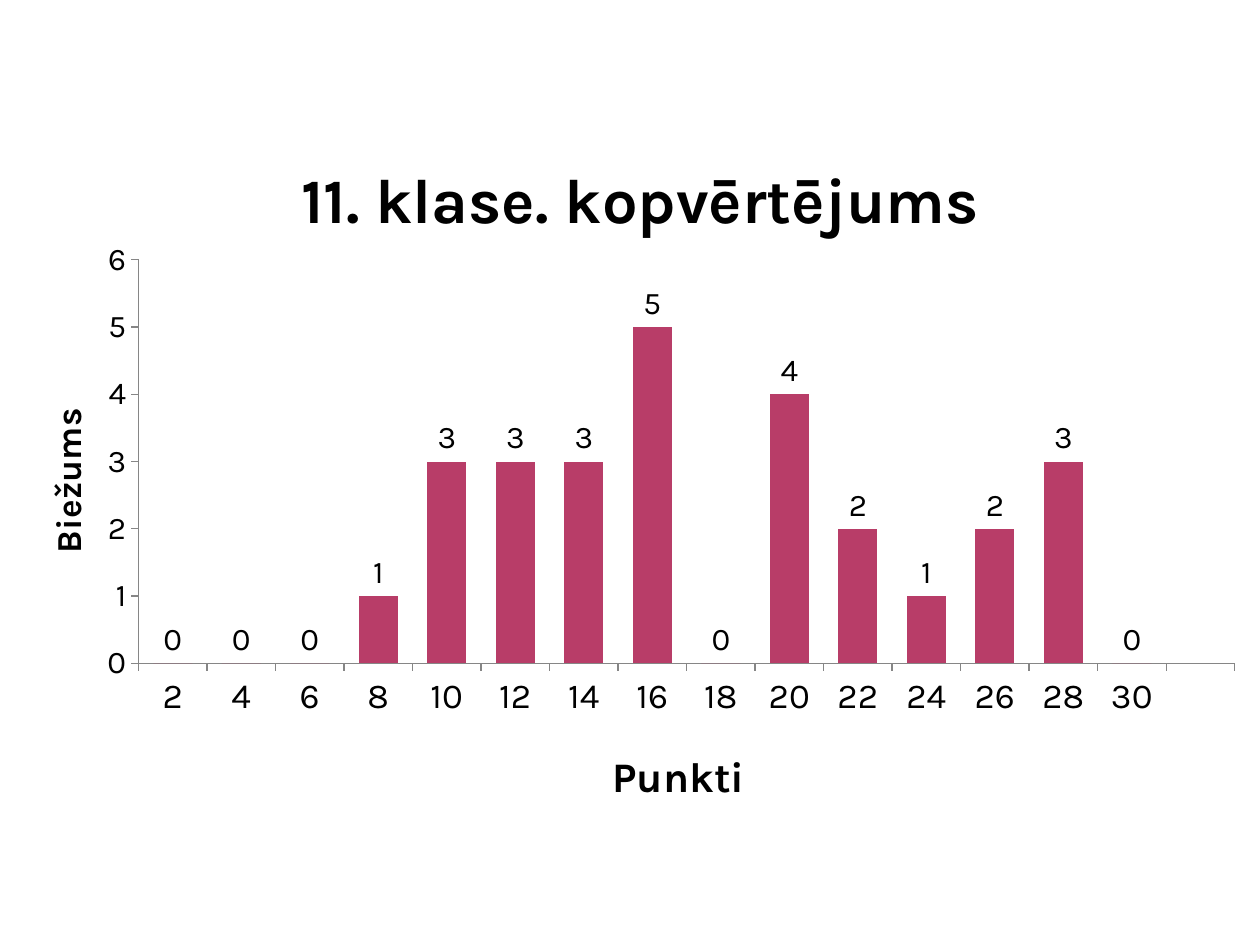
"""Build a slide with a column chart of the class 11 score distribution."""
from dataclasses import dataclass

from lxml.etree import SubElement
from pptx import Presentation
from pptx.chart.data import CategoryChartData
from pptx.dml.color import RGBColor
from pptx.enum.chart import XL_CHART_TYPE as ChartType
from pptx.enum.chart import XL_LABEL_POSITION as LabelPosition
from pptx.enum.chart import XL_TICK_MARK as TickMark
from pptx.oxml import parse_xml
from pptx.oxml.ns import nsdecls, qn
from pptx.util import Cm, Pt

FREQUENCIES = [0, 0, 0, 1, 3, 3, 3, 5, 0, 4, 2, 1, 2, 3, 0, None]
SCORES = [str(score) for score in range(2, 31, 2)] + [""]
TITLE = "11. klase. kopvērtējums"
SCORE_TITLE = "Punkti"
FREQUENCY_TITLE = "Biežums"


@dataclass(frozen=True)
class Theme:
    font: str = "Karla"
    text: RGBColor = RGBColor(0, 0, 0)
    column: RGBColor = RGBColor(0xB8, 0x3D, 0x68)
    axis: RGBColor = RGBColor(0x86, 0x86, 0x86)
    title_size: int = 36
    score_title_size: int = 24
    frequency_title_size: int = 20
    score_size: int = 20
    label_size: int = 18


THEME = Theme()


def style_font(font, size, bold=False):
    font.name = THEME.font
    font.size = Pt(size)
    font.bold = bold
    font.color.rgb = THEME.text


def place(element, index, **fractions):
    """Give a chart part a manual layout in fractions of the chart."""
    for old_layout in element.findall(qn("c:layout")):
        element.remove(old_layout)
    layout = parse_xml(f"<c:layout {nsdecls('c')}><c:manualLayout/></c:layout>")
    settings = {"xMode": "edge", "yMode": "edge", **fractions}
    if "w" in fractions:
        settings = {"layoutTarget": "inner", **settings}
    for name, value in settings.items():
        SubElement(layout[0], qn(f"c:{name}")).set("val", str(value))
    element.insert(index, layout)


def write_title(title, text, size, x, y):
    title.text_frame.text = text
    style_font(title.text_frame.paragraphs[0].runs[0].font, size, bold=True)
    place(title.element, 1, x=x, y=y)


def style_axis(axis, title, title_size, size, x, y):
    write_title(axis.axis_title, title, title_size, x, y)
    style_font(axis.tick_labels.font, size)
    axis.has_major_gridlines = False
    axis.major_tick_mark = TickMark.OUTSIDE
    axis.minor_tick_mark = TickMark.NONE
    axis.format.line.color.rgb = THEME.axis
    axis.format.line.width = Pt(0.75)


def add_score_chart(slide):
    data = CategoryChartData(number_format="General")
    data.categories = SCORES
    data.add_series("Series 1", FREQUENCIES)
    frame = slide.shapes.add_chart(
        ChartType.COLUMN_CLUSTERED, Cm(0), Cm(2.38), Cm(25.4), Cm(14.28), data)
    chart = frame.chart
    chart.has_legend = False
    style_font(chart.font, 10)
    write_title(chart.chart_title, TITLE, THEME.title_size, 0.23, 0.04)
    style_axis(chart.category_axis, SCORE_TITLE, THEME.score_title_size,
               THEME.score_size, 0.48, 0.88)
    style_axis(chart.value_axis, FREQUENCY_TITLE, THEME.frequency_title_size,
               THEME.label_size, 0.03, 0.4)
    chart.value_axis.minimum_scale = 0
    chart.value_axis.maximum_scale = 6
    chart.value_axis.major_unit = 1
    plot_area = chart.element.find(f".//{qn('c:plotArea')}")
    place(plot_area, 0, x=0.11, y=0.2, w=0.87, h=0.57)

    plot = chart.plots[0]
    plot.gap_width = 76
    plot.vary_by_categories = False
    fill = plot.series[0].format.fill
    fill.solid()
    fill.fore_color.rgb = THEME.column
    plot.has_data_labels = True
    labels = plot.data_labels
    labels.show_value = True
    labels.position = LabelPosition.OUTSIDE_END
    style_font(labels.font, THEME.label_size)


def main():
    presentation = Presentation()
    presentation.slide_width = Cm(25.4)
    presentation.slide_height = Cm(19.05)
    slide = presentation.slides.add_slide(presentation.slide_layouts[6])
    add_score_chart(slide)
    presentation.save("out.pptx")


if __name__ == "__main__":
    main()
